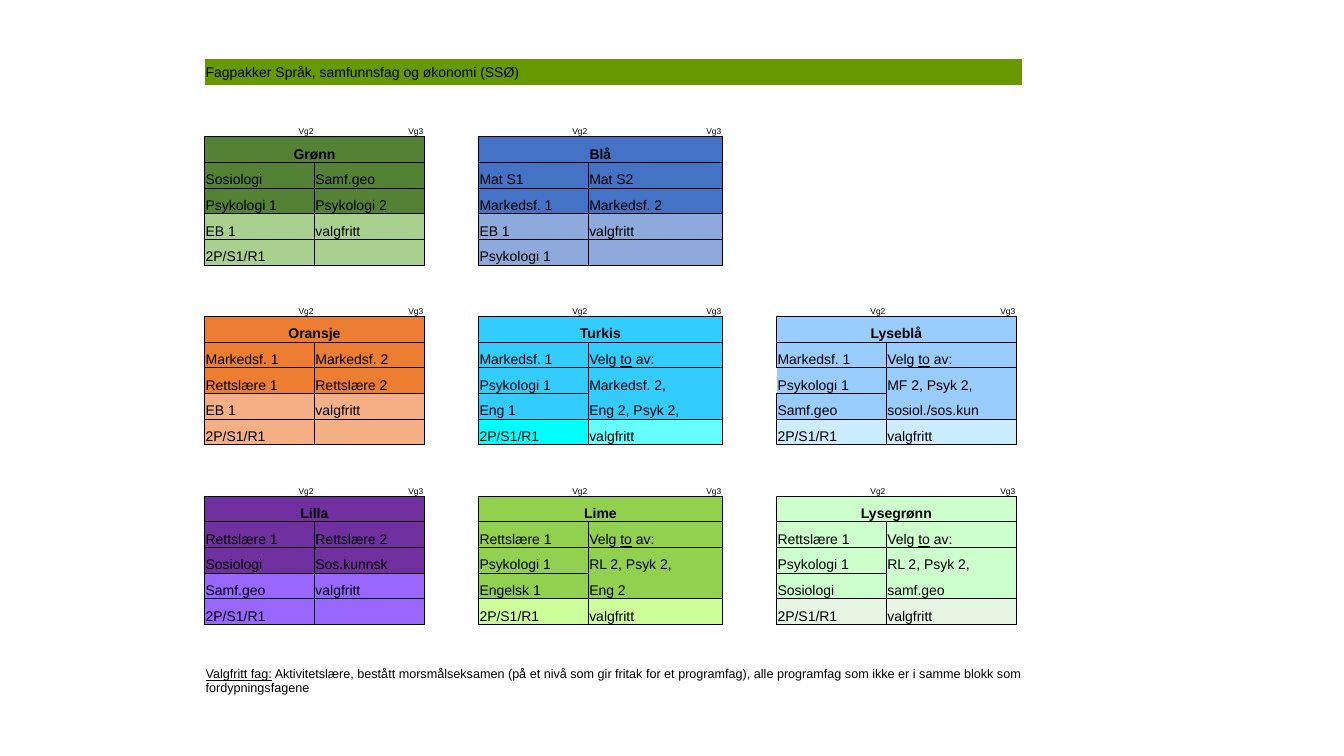
from lxml import etree
from pptx import Presentation, util as u
from pptx.dml.color import RGBColor
from pptx.enum import text
from pptx.oxml import ns

TITLE = "Fagpakker Språk, samfunnsfag og økonomi (SSØ)"
FOOTNOTE = ("_Valgfritt fag:_ Aktivitetslære, bestått morsmålseksamen (på et nivå som gir fritak for et "
            "programfag), alle programfag som ikke er i samme blokk som fordypningsfagene")
YEARS = ("Vg2", "Vg3")
PACKAGES = [
    [("Grønn", [("Sosiologi", "Samf.geo"), ("Psykologi 1", "Psykologi 2"),
                ("EB 1", "valgfritt"), ("2P/S1/R1", "")]),
     ("Blå", [("Mat S1", "Mat S2"), ("Markedsf. 1", "Markedsf. 2"),
              ("EB 1", "valgfritt"), ("Psykologi 1", "")])],
    [("Oransje", [("Markedsf. 1", "Markedsf. 2"), ("Rettslære 1", "Rettslære 2"),
                  ("EB 1", "valgfritt"), ("2P/S1/R1", "")]),
     ("Turkis", [("Markedsf. 1", "Velg _to_ av:"), ("Psykologi 1", "Markedsf. 2,"),
                 ("Eng 1", "Eng 2, Psyk 2,"), ("2P/S1/R1", "valgfritt")]),
     ("Lyseblå", [("Markedsf. 1", "Velg _to_ av:"), ("Psykologi 1", "MF 2, Psyk 2,"),
                  ("Samf.geo", "sosiol./sos.kun"), ("2P/S1/R1", "valgfritt")])],
    [("Lilla", [("Rettslære 1", "Rettslære 2"), ("Sosiologi", "Sos.kunnsk"),
                ("Samf.geo", "valgfritt"), ("2P/S1/R1", "")]),
     ("Lime", [("Rettslære 1", "Velg _to_ av:"), ("Psykologi 1", "RL 2, Psyk 2,"),
               ("Engelsk 1", "Eng 2"), ("2P/S1/R1", "valgfritt")]),
     ("Lysegrønn", [("Rettslære 1", "Velg _to_ av:"), ("Psykologi 1", "RL 2, Psyk 2,"),
                    ("Sosiologi", "samf.geo"), ("2P/S1/R1", "valgfritt")])],
]
COLOURS = {
    "title": "669900", "ink": "000000",
    "Grønn": "548235", "Grønn light": "A9D08E",
    "Blå": "4472C4", "Blå light": "8EA9DB",
    "Oransje": "ED7D31", "Oransje light": "F4B084",
    "Turkis": "33CCFF", "Turkis light": "66FFFF", "Turkis light Vg2": "00FFFF",
    "Lyseblå": "99CCFF", "Lyseblå light": "CCECFF",
    "Lilla": "7030A0", "Lilla light": "9966FF",
    "Lime": "92D050", "Lime light": "CCFF99",
    "Lysegrønn": "CCFFCC", "Lysegrønn light": "E7F6E2",
}
OPEN_CHOICE = "Velg _to_ av:"
COLUMNS = [1.09, 1.09, 0.54, 1.09, 1.33, 0.54, 1.09, 1.29, 0.06]
ROW_COUNT, FIRST_ROW, BAND_ROWS, PACKAGE_COLUMNS = 24, 2, 7, 3
LEFT, TOP, WIDTH, HEIGHT, FOOTNOTE_HEIGHT = 2.03, 0.59, 8.11, 6.31, 0.45
NO_STYLE = "{2D5ABB26-0587-4C30-8999-92F81FD0307C}"
ALIGN = text.PP_ALIGN


def draw_borders(cell, sides):
    properties = cell._tc.get_or_add_tcPr()
    for side in "LRTB":
        if side in sides:
            line = etree.SubElement(properties, ns.qn("a:ln" + side), w=str(u.Pt(0.5)))
            fill = etree.SubElement(line, ns.qn("a:solidFill"))
            etree.SubElement(fill, ns.qn("a:srgbClr"), val=COLOURS["ink"])


def write(cell, words, size=10, align=ALIGN.LEFT, bold=False):
    paragraph = cell.text_frame.paragraphs[0]
    paragraph.alignment = align
    for position, part in enumerate(words.split("_")):
        if part:
            run = paragraph.add_run()
            run.text = part
            run.font.name, run.font.size, run.font.bold = "Arial", u.Pt(size), bold
            run.font.underline = position % 2 == 1
            run.font.color.rgb = RGBColor.from_string(COLOURS["ink"])


def paint(cell, colour):
    cell.fill.solid()
    cell.fill.fore_color.rgb = RGBColor.from_string(COLOURS[colour])


def fill_package(table, top, left, name, subjects):
    is_open = subjects[0][1] == OPEN_CHOICE
    strong_rows = 3 if is_open else 2
    for side, year in enumerate(YEARS):
        label, heading = (table.cell(top + step, left + side) for step in (0, 1))
        write(label, year, 6, ALIGN.RIGHT)
        draw_borders(label, "B")
        draw_borders(heading, "LRTB")
        paint(heading, name)
        for index, pair in enumerate(subjects):
            cell = table.cell(top + 2 + index, left + side)
            strong = index < strong_rows
            borders = "LRTB"
            if is_open and side == 1 and strong:
                borders = ("LRT", "LR", "LRB")[index]
            elif name == "Lyseblå" and side == 0 and index == 1:
                borders = "RTB"
            write(cell, pair[side])
            draw_borders(cell, borders)
            shade = name if strong else name + " light"
            paint(cell, f"{shade} {year}" if f"{shade} {year}" in COLOURS else shade)
    heading = table.cell(top + 1, left)
    heading.merge(table.cell(top + 1, left + 1))
    write(heading, name, align=ALIGN.CENTER, bold=True)


def main():
    presentation = Presentation()
    presentation.slide_width, presentation.slide_height = u.Inches(13.33), u.Inches(7.5)
    slide = presentation.slides.add_slide(presentation.slide_layouts[6])
    frame = slide.shapes.add_table(ROW_COUNT, len(COLUMNS), u.Inches(LEFT), u.Inches(TOP),
                                   u.Inches(WIDTH), u.Inches(HEIGHT))
    table = frame.table
    table.first_row = table.horz_banding = False
    table._tbl.tblPr.find(ns.qn("a:tableStyleId")).text = NO_STYLE
    for column, share in zip(table.columns, COLUMNS):
        column.width = u.Inches(WIDTH * share / sum(COLUMNS))
    for row in table.rows:
        row.height = u.Inches((HEIGHT - FOOTNOTE_HEIGHT) / (ROW_COUNT - 1))
    table.rows[ROW_COUNT - 1].height = u.Inches(FOOTNOTE_HEIGHT)
    for cell in table.iter_cells():
        cell.margin_left = cell.margin_right = cell.margin_top = u.Inches(0.01)
        cell.margin_bottom = 0
        cell.vertical_anchor = text.MSO_ANCHOR.BOTTOM

    for band, packages in enumerate(PACKAGES):
        for position, (name, subjects) in enumerate(packages):
            fill_package(table, FIRST_ROW + band * BAND_ROWS, position * PACKAGE_COLUMNS, name, subjects)

    title, footnote = table.cell(0, 0), table.cell(ROW_COUNT - 1, 0)
    for row, cell in ((0, title), (ROW_COUNT - 1, footnote)):
        cell.merge(table.cell(row, len(COLUMNS) - 1))
    title.vertical_anchor = text.MSO_ANCHOR.MIDDLE
    write(title, TITLE)
    paint(title, "title")
    write(footnote, FOOTNOTE, 9)

    for cell in table.iter_cells():
        if not cell.text_frame.text:
            etree.SubElement(cell.text_frame.paragraphs[0]._p, ns.qn("a:endParaRPr"), sz="600")
    presentation.save("out.pptx")


if __name__ == "__main__":
    main()
